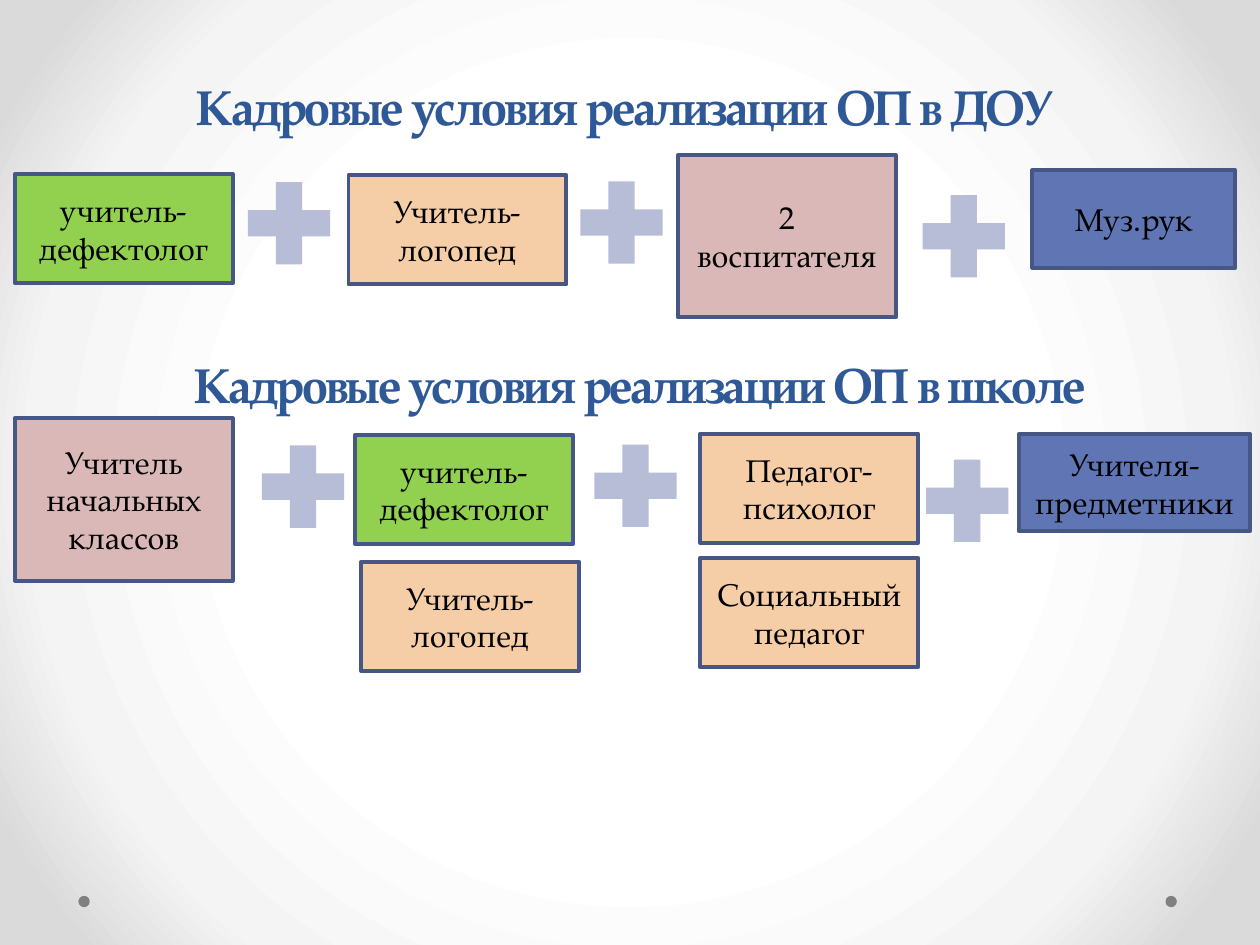
from dataclasses import dataclass

from lxml.etree import SubElement
from pptx import Presentation
from pptx.dml.color import RGBColor
from pptx.enum.shapes import MSO_SHAPE
from pptx.enum.text import MSO_ANCHOR, PP_ALIGN
from pptx.oxml.ns import qn
from pptx.util import Pt


@dataclass(frozen=True)
class Theme:
    font: str = "TeX Gyre Pagella"
    heading_size: float = 28
    label_size: float = 18
    heading: str = "2F5897"
    label: str = "000000"
    outline: str = "475785"
    plus: str = "B7BDD6"
    dot: str = "808080"
    green: str = "92D050"
    peach: str = "F5CEA7"
    rose: str = "DAB8B8"
    blue: str = "6076B4"
    # Background stops: percent from the centre, colour
    glow: tuple = ((50, "FFFFFF"), (76, "F4F4F4"), (92, "DADADA"))


class SlideBuilder:
    def __init__(self, page, theme):
        self.page = page
        self.theme = theme

    def background(self):
        self.page.background.fill.gradient()
        gradient = self.page.element.find(".//" + qn("a:gradFill"))
        for child in list(gradient):
            gradient.remove(child)
        stops = SubElement(gradient, qn("a:gsLst"))
        for percent, color in self.theme.glow:
            stop = SubElement(stops, qn("a:gs"), pos=str(percent * 1000))
            SubElement(stop, qn("a:srgbClr"), val=color)
        circle = SubElement(gradient, qn("a:path"), {"path": "circle"})
        SubElement(circle, qn("a:fillToRect"), l="50000", t="50000", r="50000", b="50000")

    def add_text(self, box, text, size, color, anchor, bold=False):
        frame = box.text_frame
        frame.word_wrap = True
        frame.vertical_anchor = anchor
        para = frame.paragraphs[0]
        para.alignment = PP_ALIGN.CENTER
        span = para.add_run()
        span.text = text
        span.font.name = self.theme.font
        span.font.size = Pt(size)
        span.font.bold = bold
        span.font.color.rgb = RGBColor.from_string(color)
        return span

    def heading(self, box, text, left, top):
        box.left, box.top, box.width, box.height = Pt(left), Pt(top), Pt(720), Pt(49)
        span = self.add_text(box, text, self.theme.heading_size, self.theme.heading,
                             MSO_ANCHOR.BOTTOM, bold=True)
        # Slightly tightened letters
        span.font._element.set("spc", "-100")

    def title(self, text, left, top):
        self.heading(self.page.shapes.title, text, left, top)

    def subtitle(self, text, left, top):
        box = self.page.shapes.add_textbox(0, 0, Pt(720), Pt(49))
        self.heading(box, text, left, top)

    def shape(self, kind, left, top, width, height, fill):
        shape = self.page.shapes.add_shape(kind, Pt(left), Pt(top), Pt(width), Pt(height))
        shape.shadow.inherit = False
        shape.fill.solid()
        shape.fill.fore_color.rgb = RGBColor.from_string(fill)
        shape.line.fill.background()
        return shape

    def role(self, text, fill, left, top, width=124.5, height=62.5):
        box = self.shape(MSO_SHAPE.RECTANGLE, left, top, width, height, fill)
        box.line.color.rgb = RGBColor.from_string(self.theme.outline)
        box.line.width = Pt(2.25)
        self.add_text(box, text, self.theme.label_size, self.theme.label, MSO_ANCHOR.MIDDLE)

    def plus(self, left, top):
        self.shape(MSO_SHAPE.MATH_PLUS, left, top, 64, 64, self.theme.plus)

    def dot(self, left, top):
        self.shape(MSO_SHAPE.OVAL, left, top, 6.5, 6.5, self.theme.dot)


def main():
    deck = Presentation()
    deck.slide_width, deck.slide_height = Pt(720), Pt(540)
    theme = Theme()
    slide = SlideBuilder(deck.slides.add_slide(deck.slide_layouts[5]), theme)

    # Backdrop
    slide.background()
    for left in (666, 44.8):
        slide.dot(left, 511.9)

    # Headings
    slide.title("Кадровые условия реализации ОП в ДОУ ", 0, 31.7)
    slide.subtitle("Кадровые условия реализации ОП в школе ", 8.5, 190.8)

    # Kindergarten staff
    slide.role("учитель-дефектолог", theme.green, 8.5, 99.4)
    slide.role("Учитель-логопед", theme.peach, 199.2, 100)
    slide.role("2 воспитателя", theme.rose, 387.4, 88.6, height=92.8)
    slide.role("Муз.рук", theme.blue, 590, 97.2, width=116, height=55.8)

    # School staff
    slide.role("учитель-дефектолог", theme.green, 203, 248.4)
    slide.role("Учитель-логопед", theme.peach, 206.5, 321)
    slide.role("Учитель начальных классов", theme.rose, 8.5, 239, height=92.8)
    slide.role("Учителя-предметники", theme.blue, 582.4, 247.8, width=131.8, height=55.8)
    slide.role("Педагог-психолог", theme.peach, 400.2, 247.8)
    slide.role("Социальный педагог", theme.peach, 400.2, 318.8)

    # Plus signs between the roles, row by row
    for left, top in ((133.2, 95.6), (323.2, 95.2), (518.7, 103),
                      (141.2, 246.1), (331.2, 245.6), (520.7, 254.2)):
        slide.plus(left, top)

    deck.save("out.pptx")


if __name__ == "__main__":
    main()
